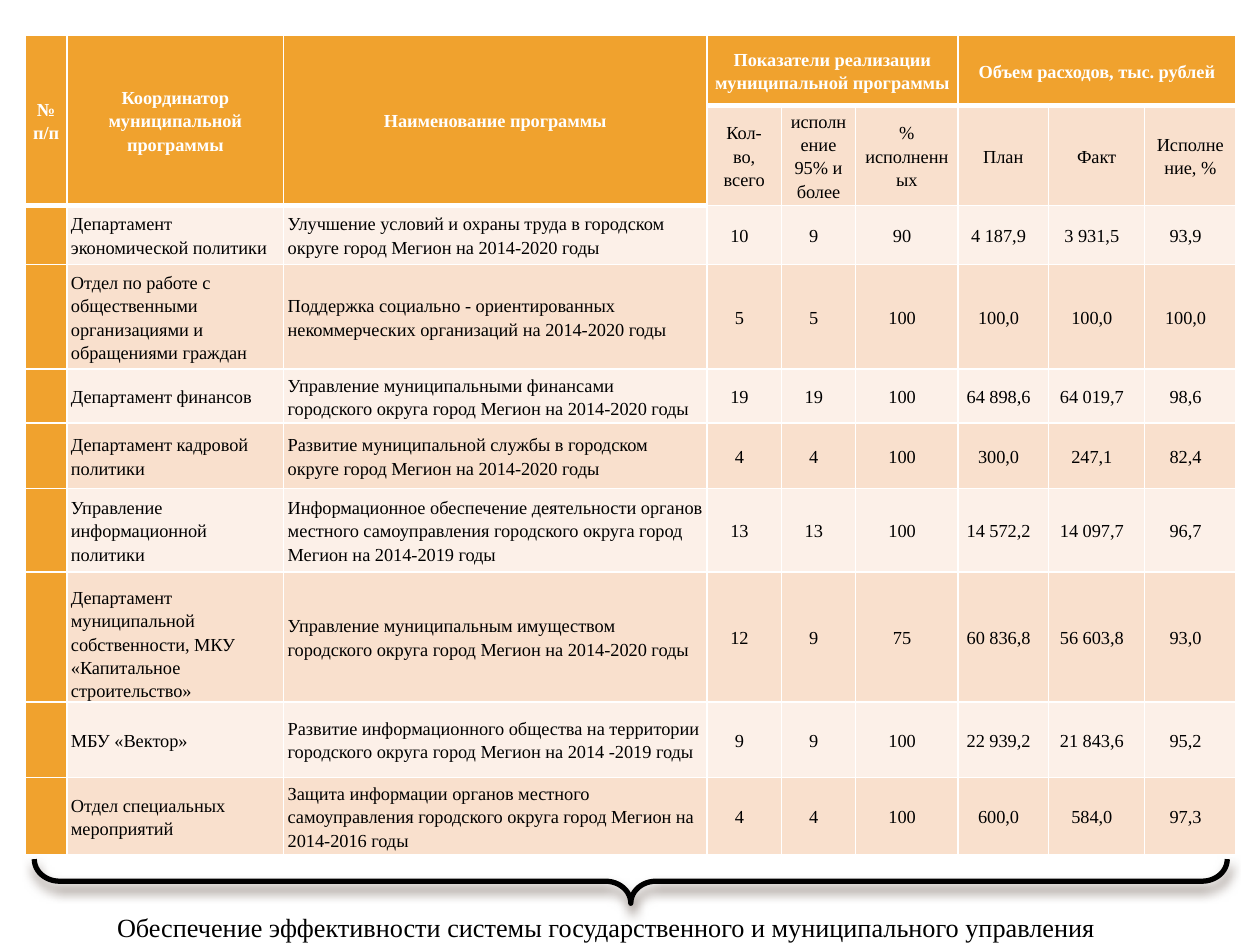
from dataclasses import dataclass

import pptx
import pptx.dml.color
import pptx.enum.shapes
import pptx.enum.text
import pptx.oxml
import pptx.oxml.ns
import pptx.util
from pptx.util import Cm

ALIGN = pptx.enum.text.PP_ALIGN
ANCHOR = pptx.enum.text.MSO_ANCHOR
FONT = "Times New Roman"
COLORS = {
    "header": "F0A22E",
    "light": "FCF0E8",
    "dark": "F9E0CD",
    "border": "FFFFFF",
    "header_text": "FFFFFF",
    "text": "000000",
    "shadow": "4E3B30",
}
COLUMN_WIDTHS = [0.84, 4.37, 8.53, 1.5, 1.5, 2.06, 1.83, 1.93, 1.85]
HEADER_HEIGHTS = [1.42, 2.01]
FIRST_VALUE = 3


@dataclass
class Heading:
    column: int
    text: str
    rows: int = 1
    columns: int = 1


@dataclass
class Program:
    height: float
    coordinator: str
    title: str
    values: list[str]
    anchor: ANCHOR = ANCHOR.MIDDLE


HEADINGS = [
    Heading(0, "№ п/п", rows=2),
    Heading(1, "Координатор муниципальной программы", rows=2),
    Heading(2, "Наименование программы", rows=2),
    Heading(3, "Показатели реализации муниципальной программы", columns=3),
    Heading(6, "Объем расходов, тыс. рублей", columns=3),
]
SUBHEADINGS = ["Кол-во, всего", "исполнение 95% и более", "% исполненных",
               "План", "Факт", "Исполнение, %"]
PROGRAMS = [
    Program(1.19, "Департамент экономической политики",
            "Улучшение условий и охраны труда в городском округе город Мегион на 2014-2020 годы",
            ["10", "9", "90", "4 187,9", "3 931,5", "93,9"]),
    Program(2.11, "Отдел по работе с общественными организациями и обращениями граждан",
            "Поддержка социально - ориентированных некоммерческих организаций на 2014-2020 годы",
            ["5", "5", "100", "100,0", "100,0", "100,0"]),
    Program(1.09, "Департамент финансов",
            "Управление муниципальными финансами городского округа город Мегион на 2014-2020 годы",
            ["19", "19", "100", "64 898,6", "64 019,7", "98,6"]),
    Program(1.32, "Департамент кадровой политики",
            "Развитие муниципальной службы в городском округе город Мегион на 2014-2020 годы",
            ["4", "4", "100", "300,0", "247,1", "82,4"]),
    Program(1.68, "Управление информационной политики",
            "Информационное обеспечение деятельности органов местного самоуправления "
            "городского округа город Мегион на 2014-2019 годы",
            ["13", "13", "100", "14 572,2", "14 097,7", "96,7"]),
    Program(2.62, "Департамент муниципальной собственности, МКУ «Капитальное строительство»",
            "Управление муниципальным имуществом городского округа город Мегион на 2014-2020 годы",
            ["12", "9", "75", "60 836,8", "56 603,8", "93,0"], ANCHOR.BOTTOM),
    Program(1.52, "МБУ «Вектор»",
            "Развитие информационного общества на территории городского округа "
            "город Мегион на 2014 -2019 годы",
            ["9", "9", "100", "22 939,2", "21 843,6", "95,2"]),
    Program(1.57, "Отдел специальных мероприятий",
            "Защита информации органов местного самоуправления городского округа "
            "город Мегион на 2014-2016 годы",
            ["4", "4", "100", "600,0", "584,0", "97,3"]),
]


def rgb(name: str) -> pptx.dml.color.RGBColor:
    return pptx.dml.color.RGBColor.from_string(COLORS[name])


def format_run(r, size: float, color: str = "text", bold: bool = False) -> None:
    r.font.name = FONT
    r.font.size = pptx.util.Pt(size)
    r.font.bold = bold
    r.font.color.rgb = rgb(color)


def style_cell(cell, fill: str, bottom: float = 1, top: bool = False) -> None:
    """Border and fill a cell; each row's top edge is the bottom edge of the row above."""
    tc_pr = cell._tc.get_or_add_tcPr()
    edges = {"lnL": 1, "lnR": 1, "lnT": 1, "lnB": bottom}
    if not top:
        del edges["lnT"]
    for tag, width in edges.items():
        tc_pr.append(pptx.oxml.parse_xml(
            f'<a:{tag} {pptx.oxml.ns.nsdecls("a")} w="{pptx.util.Pt(width)}"><a:solidFill>'
            f'<a:srgbClr val="{COLORS["border"]}"/></a:solidFill></a:{tag}>'))
    cell.fill.solid()
    cell.fill.fore_color.rgb = rgb(fill)
    cell.margin_top = cell.margin_bottom = 0


def write_cell(cell, text: str, align: ALIGN = ALIGN.CENTER, left: float = 0.08,
               right: float = 0.08, anchor: ANCHOR = ANCHOR.MIDDLE,
               color: str = "text", bold: bool = False) -> None:
    cell.margin_left, cell.margin_right = Cm(left), Cm(right)
    cell.vertical_anchor = anchor
    cell.text_frame.text = text
    p = cell.text_frame.paragraphs[0]
    p.alignment = align
    p.line_spacing = 1.15
    format_run(p.runs[0], 10.5, color, bold)


def add_program_table(s) -> None:
    heights = HEADER_HEIGHTS + [program.height for program in PROGRAMS]
    table = s.shapes.add_table(len(heights), len(COLUMN_WIDTHS), Cm(0.51), Cm(0.71),
                               Cm(sum(COLUMN_WIDTHS)), Cm(sum(heights))).table
    table.first_row = table.horz_banding = False
    for column, width in zip(table.columns, COLUMN_WIDTHS):
        column.width = Cm(width)
    for row, height in zip(table.rows, heights):
        row.height = Cm(height)

    for i in range(len(heights)):
        for j in range(len(COLUMN_WIDTHS)):
            heading = i == 0 or (i == 1 and j < FIRST_VALUE)
            fill = "header" if heading or j == 0 else ("dark" if i % 2 else "light")
            style_cell(table.cell(i, j), fill, 3 if heading else 1, top=i == 0)

    for h in HEADINGS:
        cell = table.cell(0, h.column)
        cell.merge(table.cell(h.rows - 1, h.column + h.columns - 1))
        write_cell(cell, h.text, color="header_text", bold=True)
    for j, text in enumerate(SUBHEADINGS, FIRST_VALUE):
        write_cell(table.cell(1, j), text, left=0.18, right=0.18)
    for i, program in enumerate(PROGRAMS, len(HEADER_HEIGHTS)):
        write_cell(table.cell(i, 1), program.coordinator, ALIGN.LEFT, anchor=program.anchor)
        write_cell(table.cell(i, 2), program.title, ALIGN.LEFT)
        for j, value in enumerate(program.values, FIRST_VALUE):
            write_cell(table.cell(i, j), value, right=0.27)


def add_brace(s) -> None:
    brace = s.shapes.add_shape(pptx.enum.shapes.MSO_SHAPE.RIGHT_BRACE,
                               Cm(12.27), Cm(5.74), Cm(0.89), Cm(24.05))
    brace.rotation = 90
    brace.adjustments[0] = 0.57
    brace.adjustments[1] = 0.5
    brace.fill.background()
    brace.line.color.rgb = rgb("text")
    brace.line.width = pptx.util.Pt(3)
    brace._element.spPr.append(pptx.oxml.parse_xml(
        f'<a:effectLst {pptx.oxml.ns.nsdecls("a")}><a:outerShdw blurRad="{pptx.util.Pt(6)}" '
        f'dist="{pptx.util.Pt(4)}" dir="5400000" rotWithShape="0">'
        f'<a:srgbClr val="{COLORS["shadow"]}"><a:alpha val="60000"/></a:srgbClr>'
        '</a:outerShdw></a:effectLst>'))


def add_caption(s) -> None:
    tf = s.shapes.add_textbox(Cm(2.11), Cm(18.24), Cm(24.69), Cm(0.89)).text_frame
    tf.word_wrap = True
    tf.auto_size = pptx.enum.text.MSO_AUTO_SIZE.SHAPE_TO_FIT_TEXT
    tf.text = "Обеспечение эффективности системы государственного и муниципального управления"
    format_run(tf.paragraphs[0].runs[0], 15)


def main() -> None:
    prs = pptx.Presentation()
    prs.slide_width, prs.slide_height = Cm(25.4), Cm(19.05)
    s = prs.slides.add_slide(prs.slide_layouts[6])
    add_program_table(s)
    add_brace(s)
    add_caption(s)
    prs.save("out.pptx")


if __name__ == "__main__":
    main()
